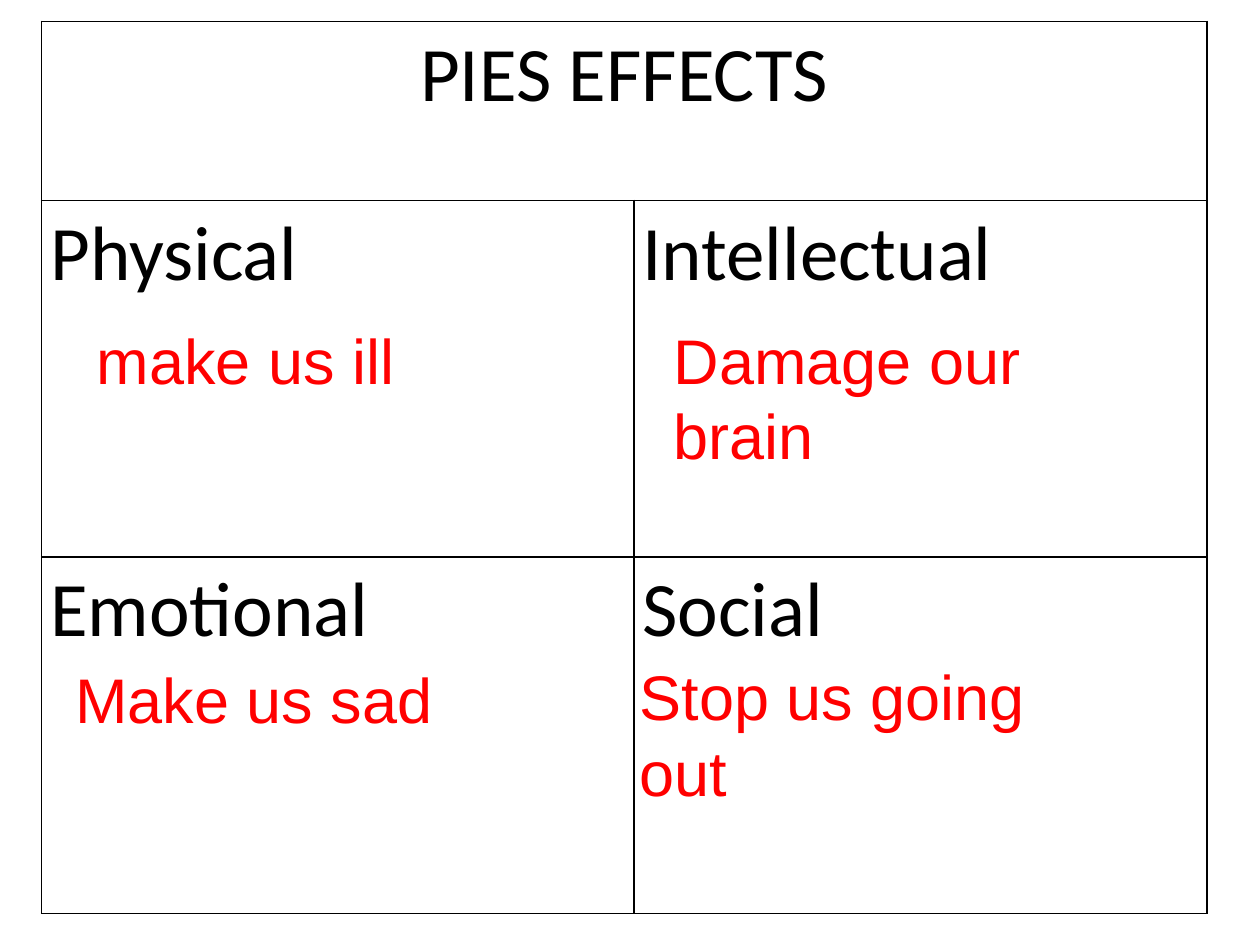
"""Build the PIES effects grid slide."""
from lxml.etree import SubElement
from pptx import Presentation
from pptx.dml.color import RGBColor
from pptx.enum.text import PP_ALIGN
from pptx.oxml.ns import qn
from pptx.util import Inches, Pt

BLACK = RGBColor(0, 0, 0)
RED = RGBColor(255, 0, 0)
COLS = (4.7, 4.55)
ROWS = (1.42, 2.83, 2.83)
HEADS = (("Physical", "Intellectual"), ("Emotional", "Social"))
NOTES = (
    ("make us ill", 0.67, 2.5, 0.71),
    ("Damage our brain", 5.25, 2.5, 1.31),
    ("Make us sad", 0.5, 5.19, 0.71),
    ("Stop us going out", 4.98, 5.17, 1.31),
)


def write(frame, text, size=44, font="Calibri", color=BLACK,
          align=PP_ALIGN.LEFT, space=None):
    """Put one formatted paragraph into a text frame."""
    frame.word_wrap = True
    para = frame.paragraphs[0]
    para.alignment = align
    para.line_spacing = space
    run = para.add_run()
    run.text = text
    run.font.size = Pt(size)
    run.font.name = font
    run.font.color.rgb = color


def border(cell):
    """Draw a thin black line on each side of a cell."""
    props = cell._tc.get_or_add_tcPr()
    for side in ("lnL", "lnR", "lnT", "lnB"):
        line = SubElement(props, qn(f"a:{side}"), w=str(Pt(1)))
        fill = SubElement(line, qn("a:solidFill"))
        SubElement(fill, qn("a:srgbClr"), val=str(BLACK))


def style(cell):
    """Give a cell its borders, margins and empty fill."""
    border(cell)
    cell.fill.background()
    cell.margin_left = cell.margin_right = Inches(0.07)
    cell.margin_top = cell.margin_bottom = 0


def add_grid(slide):
    """Add the titled two-by-two table."""
    frame = slide.shapes.add_table(
        len(ROWS), len(COLS), Inches(0.33), Inches(0.17),
        Inches(sum(COLS)), Inches(sum(ROWS)))
    grid = frame.table
    grid.first_row = grid.horz_banding = False
    for col, width in zip(grid.columns, COLS):
        col.width = Inches(width)
    for row, height in zip(grid.rows, ROWS):
        row.height = Inches(height)
    for cell in grid.iter_cells():
        style(cell)
    title = grid.cell(0, 0)
    title.merge(grid.cell(0, 1))
    write(title.text_frame, "PIES EFFECTS", align=PP_ALIGN.CENTER, space=1.07)
    for r, heads in enumerate(HEADS, 1):
        for c, head in enumerate(heads):
            write(grid.cell(r, c).text_frame, head, space=1.07)


def add_note(slide, text, left, top, height):
    """Add one red answer over the grid."""
    box = slide.shapes.add_textbox(
        Inches(left), Inches(top), Inches(4.08), Inches(height))
    write(box.text_frame, text, size=36, font="Arial", color=RED)


def main():
    """Build and save the slide."""
    deck = Presentation()
    deck.slide_width = Inches(10)
    deck.slide_height = Inches(7.5)
    slide = deck.slides.add_slide(deck.slide_layouts[6])
    add_grid(slide)
    for note in NOTES:
        add_note(slide, *note)
    deck.save("out.pptx")


if __name__ == "__main__":
    main()
